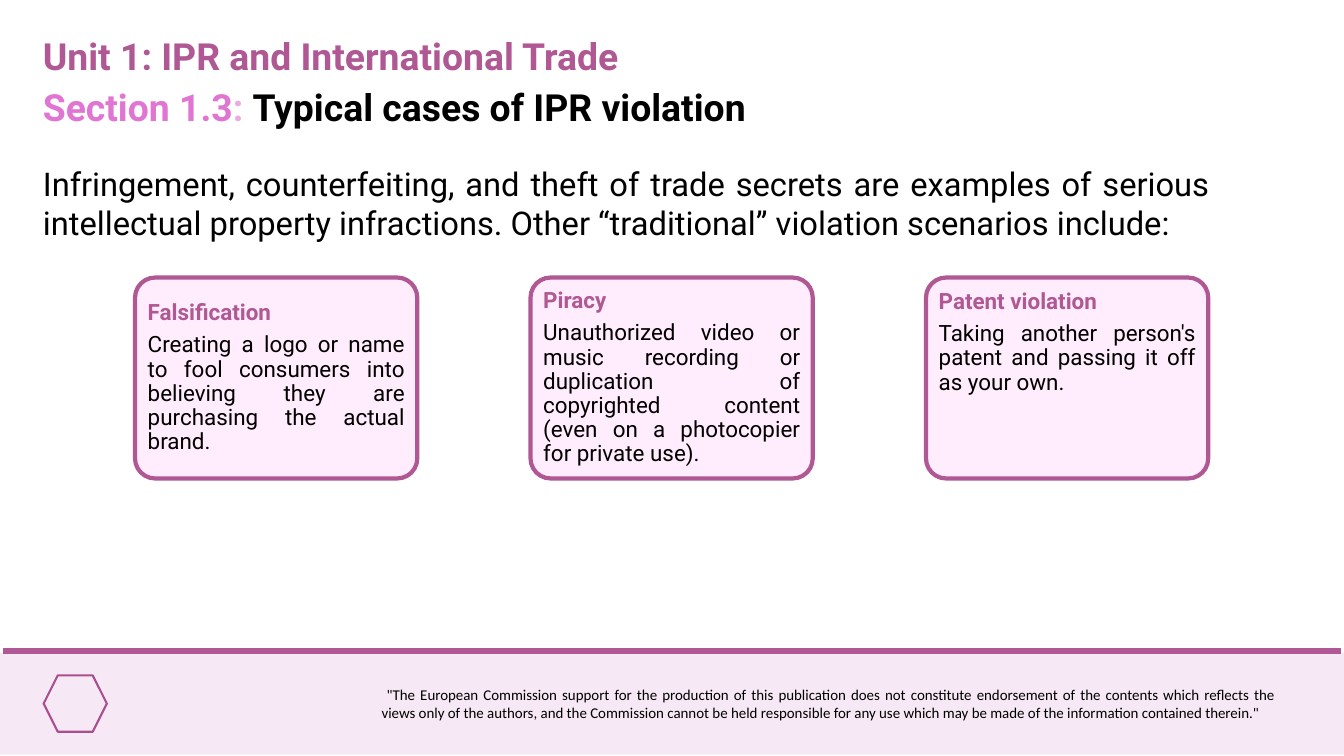
from lxml.etree import SubElement
from pptx import Presentation
from pptx.dml.color import RGBColor
from pptx.enum.shapes import MSO_CONNECTOR as Connector, MSO_SHAPE as Shape
from pptx.enum.text import MSO_ANCHOR as Anchor, MSO_AUTO_SIZE as AutoSize, PP_ALIGN as Align
from pptx.oxml.ns import qn
from pptx.util import Inches, Pt

THEME = {
    "plum": "B05894", "mark": "AB4E8E", "pink": "E076D1", "pale_pink": "ECAAE3",
    "card": "FFECFC", "footer": "F6E9F5", "ink": "000000",
    "body_font": "Roboto", "footer_font": "Calibri",
    "heading": 40, "intro": 35, "card_text": 24, "disclaimer_text": 16,
}

UNIT = [("Unit 1: IPR and International Trade", "plum")]
SECTION = [
    ("Section 1.3", "pink"),
    (": ", "pale_pink"),
    ("Typical cases of IPR violation", "ink"),
]
INTRO = (
    "Infringement, counterfeiting, and theft of trade secrets are examples of serious "
    "intellectual property infractions. Other “traditional” violation scenarios include:"
)
CARDS = [
    ("Falsification",
     "Creating a logo or name to fool consumers into believing they are purchasing "
     "the actual brand.", Anchor.MIDDLE),
    ("Piracy",
     "Unauthorized video or music recording or duplication of copyrighted content "
     "(even on a photocopier for private use).", Anchor.MIDDLE),
    ("Patent violation",
     "Taking another person's patent and passing it off as your own.", Anchor.TOP),
]
DISCLAIMER = (
    " \"The European Commission support for the production of this publication does not "
    "constitute endorsement of the contents which reflects the views only of the authors, "
    "and the Commission cannot be held responsible for any use which may be made of the "
    "information contained therein.\""
)

CARD_LEFT, CARD_TOP, CARD_WIDTH, CARD_HEIGHT = 2.01, 4.13, 4.2, 2.99
CARD_PITCH = 5.885
CARD_PADDING = 0.09


def color(name):
    return RGBColor.from_string(THEME[name])


def add_block(slide, shape_type, box, fill=None, line=None, width=0):
    block = slide.shapes.add_shape(shape_type, *map(Inches, box))
    block.shadow.inherit = False
    if fill:
        block.fill.solid()
        block.fill.fore_color.rgb = color(fill)
    else:
        block.fill.background()
    if line:
        block.line.color.rgb = color(line)
        block.line.width = Pt(width)
    else:
        block.line.fill.background()
    return block


def add_frame(slide, box, wrap=True, grow=True):
    frame = slide.shapes.add_textbox(*map(Inches, box)).text_frame
    frame.word_wrap = wrap
    frame.auto_size = AutoSize.SHAPE_TO_FIT_TEXT if grow else AutoSize.NONE
    return frame


def write(paragraph, runs, size, bold=False, align=Align.LEFT, font="body_font"):
    paragraph.alignment = align
    paragraph.font.name = THEME[font]
    paragraph.font.size = Pt(THEME[size])
    paragraph.font.bold = bold
    for text, ink in runs:
        run = paragraph.add_run()
        run.text = text
        run.font.color.rgb = color(ink)


def add_footer(slide):
    add_block(slide, Shape.RECTANGLE, (0, 9.72, 20, 1.51), fill="footer")
    rule = slide.shapes.add_connector(
        Connector.STRAIGHT, *map(Inches, (0.05, 9.69, 19.95, 9.69)))
    rule.line.color.rgb = color("plum")
    rule.line.width = Pt(6.75)
    SubElement(rule._element.spPr, qn("a:effectLst"))
    add_block(slide, Shape.HEXAGON, (0.65, 10.05, 0.94, 0.84), line="mark", width=2.25)
    disclaimer = add_frame(slide, (5.58, 10.15, 13.5, 0.64))
    write(disclaimer.paragraphs[0], [(DISCLAIMER, "ink")], "disclaimer_text",
          align=Align.JUSTIFY, font="footer_font")


def add_card(slide, index, title, description, anchor):
    left = CARD_LEFT + index * CARD_PITCH
    card = add_block(slide, Shape.ROUNDED_RECTANGLE,
                     (left, CARD_TOP, CARD_WIDTH, CARD_HEIGHT), "card", "plum", 4.5)
    card.adjustments[0] = 0.1
    frame = add_frame(slide, (left + CARD_PADDING, CARD_TOP + CARD_PADDING,
                              CARD_WIDTH - 2 * CARD_PADDING,
                              CARD_HEIGHT - 2 * CARD_PADDING), grow=False)
    frame.vertical_anchor = anchor
    frame.margin_top = frame.margin_bottom = Inches(0.1)
    write(frame.paragraphs[0], [(title, "plum")], "card_text", bold=True)
    write(frame.add_paragraph(), [(description, "ink")], "card_text", align=Align.JUSTIFY)
    for paragraph in frame.paragraphs:
        paragraph.line_spacing = 0.9
        paragraph.space_after = Pt(0.35 * THEME["card_text"])


def main():
    deck = Presentation()
    deck.slide_width, deck.slide_height = Inches(20), Inches(11.25)
    slide = deck.slides.add_slide(deck.slide_layouts[6])
    add_footer(slide)
    intro = add_frame(slide, (0.54, 2.39, 17.58, 1.28))
    write(intro.paragraphs[0], [(INTRO, "ink")], "intro", align=Align.JUSTIFY)
    for index, card in enumerate(CARDS):
        add_card(slide, index, *card)
    section = add_frame(slide, (0.54, 1.21, 14.87, 0.77))
    write(section.paragraphs[0], SECTION, "heading", bold=True)
    unit = add_frame(slide, (0.54, 0.44, 8.85, 0.77), wrap=False)
    write(unit.paragraphs[0], UNIT, "heading", bold=True)
    deck.save("out.pptx")


if __name__ == "__main__":
    main()
